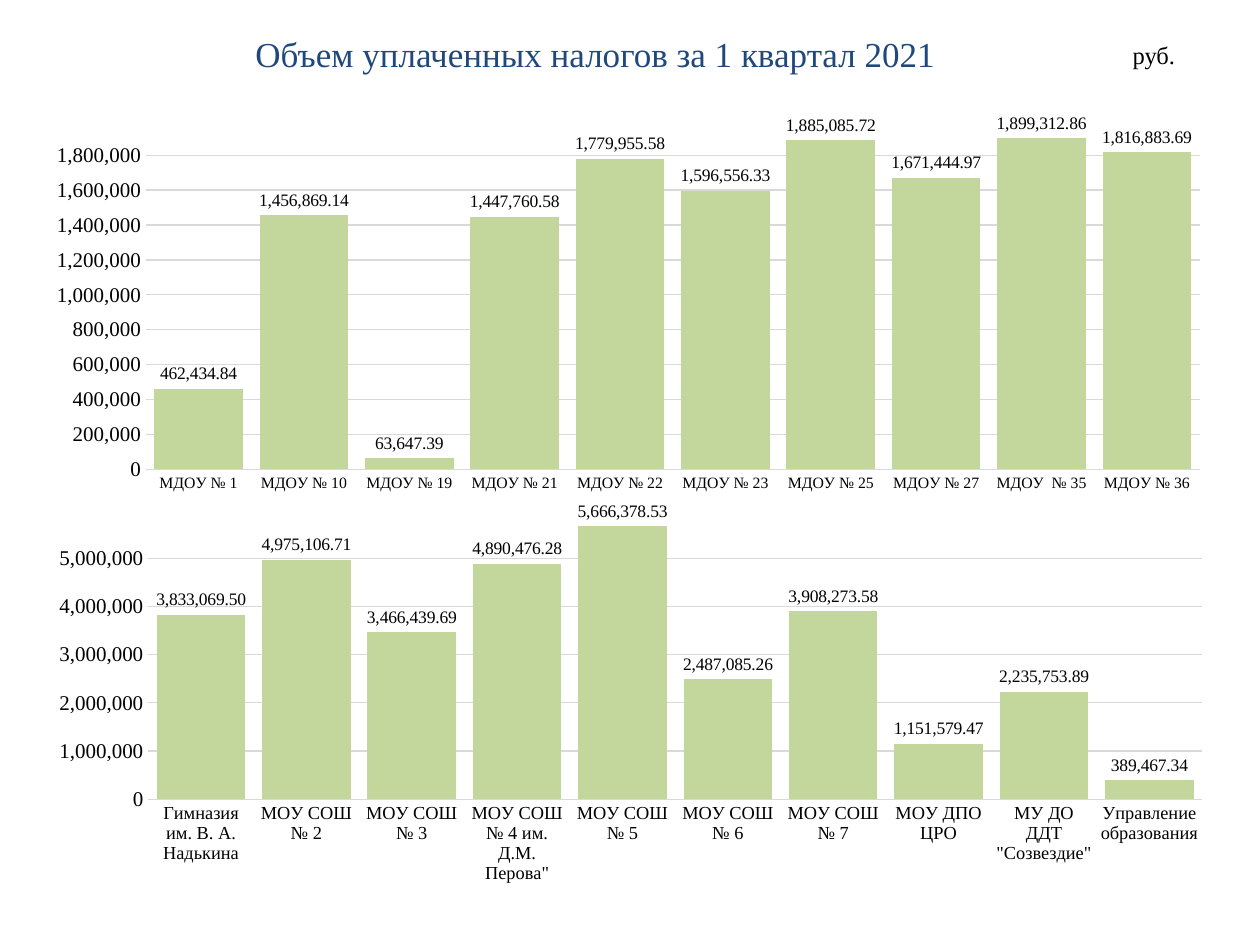
from lxml.etree import SubElement
from pptx import Presentation
from pptx.chart.data import CategoryChartData
from pptx.dml.color import RGBColor
from pptx.enum.chart import XL_CHART_TYPE, XL_LABEL_POSITION, XL_TICK_MARK
from pptx.enum.text import MSO_ANCHOR, MSO_AUTO_SIZE, PP_ALIGN
from pptx.oxml.ns import qn
from pptx.util import Inches, Pt

# Content
TITLE = "Объем уплаченных налогов за 1 квартал 2021"
UNIT = "руб."
CHARTS = [
    {
        "at": (0.26, 0.9), "max": 1900000, "step": 200000,
        "size": 9, "plot": (0.095, 0.06, 0.885, 0.86),
        "rows": [
            ("МДОУ № 1", 462434.84),
            ("МДОУ № 10", 1456869.14),
            ("МДОУ № 19", 63647.39),
            ("МДОУ № 21", 1447760.58),
            ("МДОУ № 22", 1779955.58),
            ("МДОУ № 23", 1596556.33),
            ("МДОУ № 25", 1885085.72),
            ("МДОУ № 27", 1671444.97),
            ("МДОУ  № 35", 1899312.86),
            ("МДОУ № 36", 1816883.69),
        ],
    },
    {
        "at": (0.28, 3.98), "max": 5700000, "step": 1000000,
        "size": 10.5, "plot": (0.095, 0.06, 0.885, 0.71),
        "rows": [
            ("Гимназия им. В. А. Надькина", 3833069.50),
            ("МОУ СОШ № 2", 4975106.71),
            ("МОУ СОШ № 3", 3466439.69),
            ("МОУ СОШ № 4 им. Д.М. Перова\"", 4890476.28),
            ("МОУ СОШ № 5", 5666378.53),
            ("МОУ СОШ № 6", 2487085.26),
            ("МОУ СОШ № 7", 3908273.58),
            ("МОУ ДПО ЦРО", 1151579.47),
            ("МУ ДО ДДТ \"Созвездие\"", 2235753.89),
            ("Управление образования ", 389467.34),
        ],
    },
]

# Theme
THEME = {
    "font": "Times New Roman", "base": "Calibri",
    "title": RGBColor(0x1F, 0x49, 0x7D), "ink": RGBColor(0, 0, 0),
    "bar": RGBColor(0xC3, 0xD6, 0x9B), "grid": RGBColor(0xD9, 0xD9, 0xD9),
    "title_size": 20, "unit_size": 14, "value_size": 12, "label_size": 10,
}
CHART_SIZE = (9.45, 3.07)


def assign(item, **values):
    for name, value in values.items():
        setattr(item, name, value)


def style(font, size, color=THEME["ink"], name=THEME["font"]):
    assign(font, size=Pt(size), name=name, bold=False)
    font.color.rgb = color


def rule(line):
    line.color.rgb = THEME["grid"]
    line.width = Pt(0.75)


def write(shape, text, size, color, align, wrap):
    frame = shape.text_frame
    frame.text = text
    assign(frame, word_wrap=wrap, auto_size=MSO_AUTO_SIZE.SHAPE_TO_FIT_TEXT,
           vertical_anchor=MSO_ANCHOR.TOP)
    para = frame.paragraphs[0]
    para.alignment = align
    style(para.runs[0].font, size, color)


def set_plot(chart, box):
    area = chart._chartSpace.find(".//" + qn("c:plotArea"))
    layout = area.find(qn("c:layout"))
    if layout is None:
        layout = SubElement(area, qn("c:layout"))
        area.insert(0, layout)
    manual = SubElement(layout, qn("c:manualLayout"))
    parts = [("layoutTarget", "inner"), ("xMode", "edge"), ("yMode", "edge"),
             *zip("xywh", box)]
    for tag, value in parts:
        SubElement(manual, qn("c:" + tag)).set("val", str(value))


def add_bars(slide, item):
    names, values = zip(*item["rows"])
    data = CategoryChartData()
    data.categories = names
    data.add_series("Series 1", values)
    box = [Inches(n) for n in item["at"] + CHART_SIZE]
    chart = slide.shapes.add_chart(
        XL_CHART_TYPE.COLUMN_CLUSTERED, *box, data).chart
    assign(chart, has_title=False, has_legend=False)
    style(chart.font, THEME["label_size"], name=THEME["base"])
    set_plot(chart, item["plot"])

    # Bars and their labels
    plot = chart.plots[0]
    assign(plot, gap_width=19, overlap=-27, vary_by_categories=False)
    bars = plot.series[0]
    bars.format.fill.solid()
    bars.format.fill.fore_color.rgb = THEME["bar"]
    labels = bars.data_labels
    assign(labels, show_value=True, number_format="#,##0.00",
           number_format_is_linked=False,
           position=XL_LABEL_POSITION.OUTSIDE_END)
    style(labels.font, THEME["label_size"])

    # Axes
    cat, val = chart.category_axis, chart.value_axis
    for axis, size in ((cat, item["size"]), (val, THEME["value_size"])):
        assign(axis, major_tick_mark=XL_TICK_MARK.NONE,
               minor_tick_mark=XL_TICK_MARK.NONE)
        style(axis.tick_labels.font, size)
    rule(cat.format.line)
    assign(val, minimum_scale=0, maximum_scale=item["max"],
           major_unit=item["step"], has_major_gridlines=True)
    val.format.line.fill.background()
    rule(val.major_gridlines.format.line)
    assign(val.tick_labels, number_format="#,##0",
           number_format_is_linked=False)


def main():
    deck = Presentation()
    assign(deck, slide_width=Inches(10), slide_height=Inches(7.5))
    slide = deck.slides.add_slide(deck.slide_layouts[5])

    # Heading and unit
    title = slide.shapes.title
    assign(title, left=Inches(1.22), top=Inches(0.21),
           width=Inches(7.01), height=Inches(0.44))
    write(title, TITLE, THEME["title_size"], THEME["title"],
          PP_ALIGN.CENTER, True)
    unit = slide.shapes.add_textbox(
        Inches(8.89), Inches(0.27), Inches(0.55), Inches(0.34))
    write(unit, UNIT, THEME["unit_size"], THEME["ink"], PP_ALIGN.LEFT, False)

    # Charts
    for item in CHARTS:
        add_bars(slide, item)
    deck.save("out.pptx")


if __name__ == "__main__":
    main()
